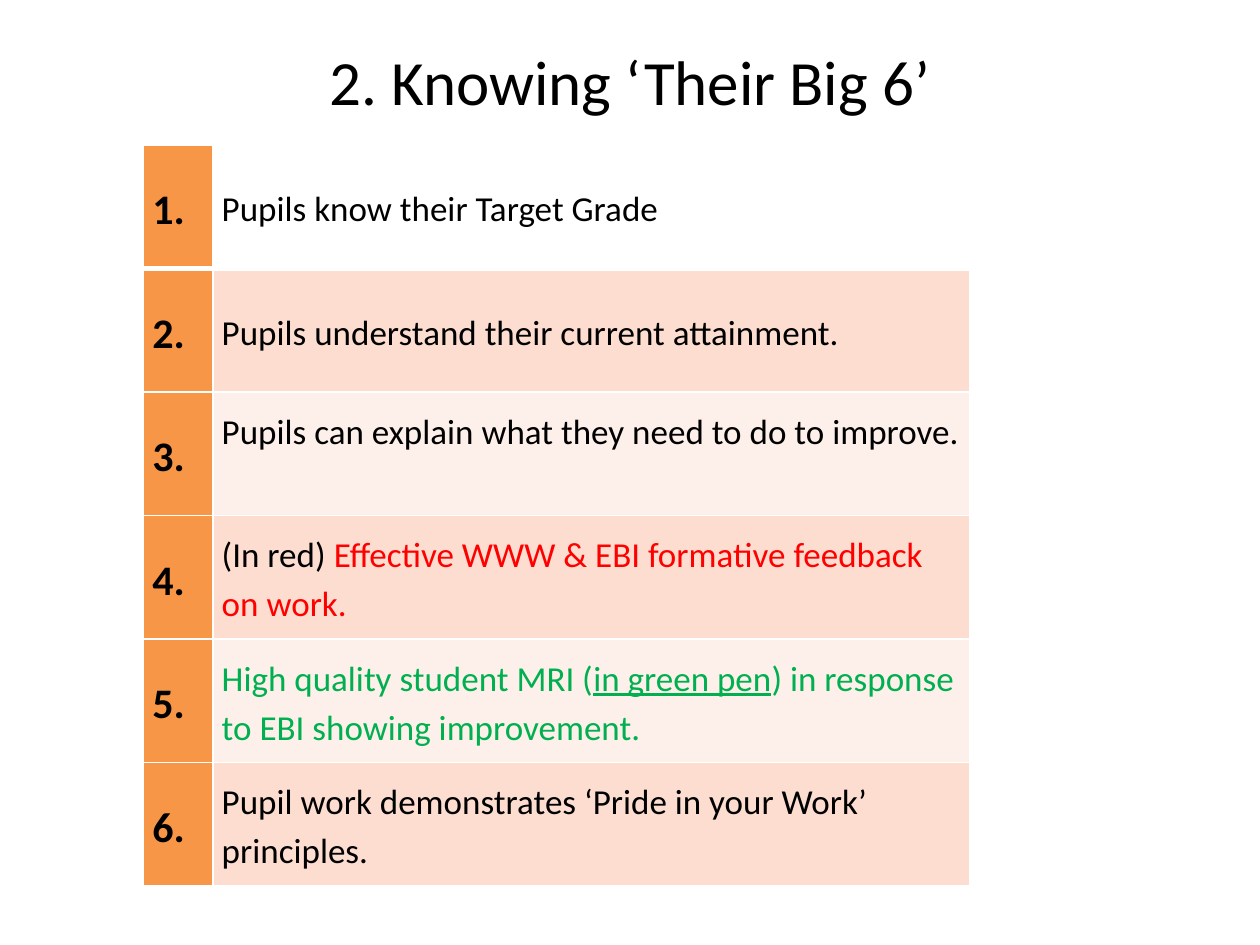
from dataclasses import dataclass

from lxml.etree import SubElement
from pptx import Presentation
from pptx.dml.color import RGBColor
from pptx.enum.text import MSO_ANCHOR, PP_ALIGN
from pptx.oxml.ns import qn
from pptx.util import Inches, Pt


@dataclass(frozen=True)
class Theme:
    font: str = "Calibri"
    title_size: int = 36
    number_size: int = 24
    point_size: int = 20
    ink: str = "000000"
    red: str = "FF0000"
    green: str = "00B050"
    paper: str = "FFFFFF"
    orange: str = "F79646"
    bands: tuple = ("FDEFE9", "FCDDCF")
    line_spacing: float = 1.15


THEME = Theme()
SLIDE_WIDTH, SLIDE_HEIGHT = Inches(10), Inches(7.5)
COLUMN_WIDTHS = (0.55, 6.01)
ROW_HEIGHT = 0.98
SIDE_MARGIN = 0.07
EMPTY_LINE = 0.39

BIG_SIX = [
    [("Pupils know their Target Grade", THEME.ink, False)],
    [("Pupils understand their current attainment.", THEME.ink, False)],
    [("Pupils can explain what they need to do to improve.", THEME.ink, False)],
    [
        ("(In red) ", THEME.ink, False),
        ("Effective WWW & EBI formative feedback on work.", THEME.red, False),
    ],
    [
        ("High quality student MRI (", THEME.green, False),
        ("in green pen", THEME.green, True),
        (") in response to EBI showing improvement.", THEME.green, False),
    ],
    [("Pupil work demonstrates ‘Pride in your Work’ principles.", THEME.ink, False)],
]
RAISED_ROW = 2


def add_run(paragraph, text, size, color=THEME.ink, bold=False, underline=False):
    run = paragraph.add_run()
    run.text = text
    run.font.name = THEME.font
    run.font.size = Pt(size)
    run.font.bold = bold
    run.font.underline = underline
    run.font.color.rgb = RGBColor.from_string(color)


def add_title(slide, text):
    title = slide.shapes.add_textbox(
        int(SLIDE_WIDTH * 0.05), int(SLIDE_HEIGHT * 0.02),
        int(SLIDE_WIDTH * 0.9), int(SLIDE_HEIGHT * 0.13),
    )
    frame = title.text_frame
    frame.word_wrap = True
    frame.vertical_anchor = MSO_ANCHOR.MIDDLE
    paragraph = frame.paragraphs[0]
    paragraph.alignment = PP_ALIGN.CENTER
    add_run(paragraph, text, THEME.title_size)


def set_borders(cell, bottom_width):
    properties = cell._tc.get_or_add_tcPr()
    widths = {"a:lnL": 1, "a:lnR": 1, "a:lnT": 1, "a:lnB": bottom_width}
    for position, (side, width) in enumerate(widths.items()):
        line = SubElement(properties, qn(side), w=str(Pt(width)))
        solid = SubElement(line, qn("a:solidFill"))
        SubElement(solid, qn("a:srgbClr"), val=THEME.paper)
        properties.insert(position, line)


def format_cell(cell, fill, bottom_border):
    set_borders(cell, bottom_border)
    cell.fill.solid()
    cell.fill.fore_color.rgb = RGBColor.from_string(fill)
    cell.vertical_anchor = MSO_ANCHOR.MIDDLE
    cell.margin_left = cell.margin_right = Inches(SIDE_MARGIN)
    cell.margin_top = cell.margin_bottom = 0
    paragraph = cell.text_frame.paragraphs[0]
    paragraph.line_spacing = THEME.line_spacing
    return paragraph


def add_big_six(slide):
    table = slide.shapes.add_table(
        len(BIG_SIX), len(COLUMN_WIDTHS),
        Inches(1.14), Inches(1.15),
        Inches(sum(COLUMN_WIDTHS)), Inches(ROW_HEIGHT * len(BIG_SIX)),
    ).table
    for column, width in zip(table.columns, COLUMN_WIDTHS):
        column.width = Inches(width)
    for index, point in enumerate(BIG_SIX):
        table.rows[index].height = Inches(ROW_HEIGHT)
        number_cell, point_cell = table.rows[index].cells
        bottom_border = 1 if index else 3
        band = THEME.bands[index % 2] if index else THEME.paper
        number = format_cell(number_cell, THEME.orange, bottom_border)
        add_run(number, f"{index + 1}.", THEME.number_size, bold=True)
        sentence = format_cell(point_cell, band, bottom_border)
        for text, color, underline in point:
            add_run(sentence, text, THEME.point_size, color, underline=underline)
    table.cell(RAISED_ROW, 1).margin_bottom = Inches(EMPTY_LINE)


def main():
    presentation = Presentation()
    presentation.slide_width = SLIDE_WIDTH
    presentation.slide_height = SLIDE_HEIGHT
    slide = presentation.slides.add_slide(presentation.slide_layouts[6])
    add_title(slide, "2. Knowing ‘Their Big 6’")
    add_big_six(slide)
    presentation.save("out.pptx")


if __name__ == "__main__":
    main()
